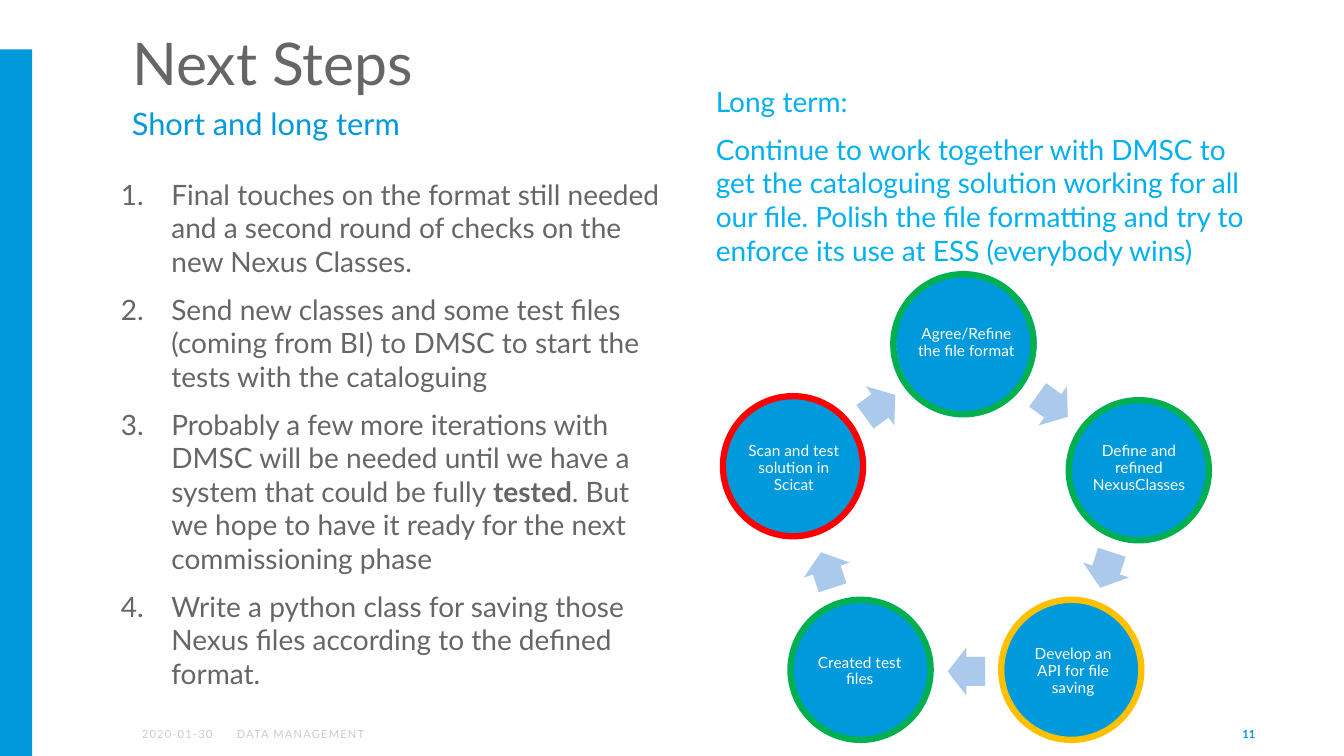
import math

import pptx
import pptx.util
from pptx.dml.color import RGBColor
from pptx.enum.shapes import MSO_SHAPE
from pptx.enum.text import MSO_ANCHOR, MSO_AUTO_SIZE, PP_ALIGN
from lxml import etree

PX = 9144  # 100 px to the inch
FONT = "Lato"
BLUE = RGBColor(0x00, 0x99, 0xDC)
SKY = RGBColor(0x00, 0xB0, 0xF0)
PALE_BLUE = RGBColor(0xAB, 0xCA, 0xEB)
GRAY = RGBColor(0x66, 0x66, 0x66)
LIGHT_GRAY = RGBColor(0xCC, 0xCC, 0xCC)
WHITE = RGBColor(0xFF, 0xFF, 0xFF)
GREEN = RGBColor(0x00, 0xB0, 0x50)
AMBER = RGBColor(0xFF, 0xC0, 0x00)
RED = RGBColor(0xFF, 0x00, 0x00)

presentation = pptx.Presentation()
presentation.slide_width = 1333 * PX
presentation.slide_height = 750 * PX
slide = presentation.slides.add_slide(presentation.slide_layouts[5])


def add_shape(kind, left, top, width, height, fill=None, line=None, line_width=1):
    shape = slide.shapes.add_shape(
        kind, round(left * PX), round(top * PX), round(width * PX), round(height * PX))
    shape.shadow.inherit = False
    if fill is None:
        shape.fill.background()
    else:
        shape.fill.solid()
        shape.fill.fore_color.rgb = fill
    if line is None:
        shape.line.fill.background()
    else:
        shape.line.color.rgb = line
        shape.line.width = pptx.util.Pt(line_width)
    return shape


def write(shape, paragraphs, size, color, insets=(10, 5, 10, 5), anchor=MSO_ANCHOR.TOP,
          align=PP_ALIGN.LEFT, spacing=None):
    """Fill a shape with paragraphs, each a list of run texts, and format them alike."""
    frame = shape.text_frame
    frame.word_wrap = True
    frame.auto_size = MSO_AUTO_SIZE.NONE
    frame.vertical_anchor = anchor
    (frame.margin_left, frame.margin_top,
     frame.margin_right, frame.margin_bottom) = [inset * PX for inset in insets]
    for index, texts in enumerate(paragraphs):
        paragraph = frame.paragraphs[0] if index == 0 else frame.add_paragraph()
        paragraph.alignment = align
        paragraph.space_before = pptx.util.Pt(10 if index else 0)
        if spacing:
            paragraph.line_spacing = spacing
        for text in texts:
            run = paragraph.add_run()
            run.text = text
            run.font.name = FONT
            run.font.size = pptx.util.Pt(size)
            run.font.color.rgb = color


# Side bar, title and subtitle
add_shape(MSO_SHAPE.RECTANGLE, 0, 49, 32, 701, BLUE)

title = slide.shapes.title
title.left, title.top, title.width, title.height = 121 * PX, 29 * PX, 1024 * PX, 72 * PX
write(title, [["Next Steps"]], 42, GRAY, (10, 5, 10, 2), spacing=0.9)

subtitle = slide.shapes.add_textbox(121 * PX, 102 * PX, 1024 * PX, 55 * PX)
write(subtitle, [["Short and long term"]], 22, BLUE, (10, 2, 10, 5))

# Short-term steps
steps = slide.shapes.add_textbox(120 * PX, 171 * PX, 546 * PX, 521 * PX)
write(steps, [
    ["Final touches on the format still needed and a second round of checks on the "
     "new Nexus Classes."],
    ["Send new classes and some test files (coming from BI) to DMSC to start the tests "
     "with the cataloguing"],
    ["Probably a few more iterations with DMSC will be needed until we have a system "
     "that could be fully ", "tested",
     ". But we hope to have it ready for the next commissioning phase"],
    ["Write a python class for saving those Nexus files according to the defined format."],
], 20, GRAY, (0, 5, 2, 5))
steps.text_frame.paragraphs[2].runs[1].font.bold = True
for paragraph in steps.text_frame.paragraphs:
    properties = paragraph._p.get_or_add_pPr()
    properties.set("marL", str(50 * PX))
    properties.set("indent", str(-50 * PX))
    number = etree.SubElement(properties, pptx.oxml.ns.qn("a:buAutoNum"))
    number.set("type", "arabicPeriod")

# Long-term goal
goal = slide.shapes.add_textbox(699 * PX, 79 * PX, 546 * PX, 200 * PX)
write(goal, [
    ["Long term:"],
    ["Continue to work together with DMSC to get the cataloguing solution working for all "
     "our file. Polish the file formatting and try to enforce its use at ESS "
     "(everybody wins)"],
], 20, SKY, (11, 5, 2, 5))

# Cycle: five discs, with an arrow halfway between neighbours
CENTER_X, CENTER_Y, RADIUS = 958.5, 520.5, 180
DISC, RING = 141, 139
ARROW_WIDTH, ARROW_HEIGHT = 37, 48
stages = [  # text, ring colour, ring left and top
    ("Agree/Refine the file format", GREEN, 886, 272),
    ("Define and refined NexusClasses", GREEN, 1060, 397),
    ("Develop an API for file saving", AMBER, 993, 595),
    ("Created test files", GREEN, 784, 595),
    ("Scan and test solution in Scicat", RED, 717, 393),
]
step_angle = 360 / len(stages)
arrow_radius = RADIUS * math.cos(math.radians(step_angle / 2))
for index, (text, ring_color, ring_left, ring_top) in enumerate(stages):
    angle = math.radians(index * step_angle)
    disc = add_shape(MSO_SHAPE.OVAL,
                     CENTER_X + RADIUS * math.sin(angle) - DISC / 2,
                     CENTER_Y - RADIUS * math.cos(angle) - DISC / 2,
                     DISC, DISC, BLUE, WHITE)
    write(disc, [[text]], 11, WHITE, (2, 2, 2, 2), MSO_ANCHOR.MIDDLE, PP_ALIGN.CENTER, 0.9)

    turn = (index + 0.5) * step_angle
    arrow = add_shape(MSO_SHAPE.RIGHT_ARROW,
                      CENTER_X + arrow_radius * math.sin(math.radians(turn)) - ARROW_WIDTH / 2,
                      CENTER_Y - arrow_radius * math.cos(math.radians(turn)) - ARROW_HEIGHT / 2,
                      ARROW_WIDTH, ARROW_HEIGHT, PALE_BLUE)
    arrow.adjustments[0] = 0.6
    arrow.adjustments[1] = 0.5
    arrow.rotation = turn

    add_shape(MSO_SHAPE.OVAL, ring_left, ring_top, RING, RING, line=ring_color, line_width=4.5)

# Footer
for text, left, width, color, align in [
    ("2020-01-30", 131, 91, LIGHT_GRAY, PP_ALIGN.LEFT),
    ("DATA MANAGEMENT", 225, 472, LIGHT_GRAY, PP_ALIGN.LEFT),
    ("11", 955, 300, BLUE, PP_ALIGN.RIGHT),
]:
    footer = slide.shapes.add_textbox(left * PX, 708 * PX, width * PX, 40 * PX)
    write(footer, [[text]], 8, color, anchor=MSO_ANCHOR.MIDDLE, align=align)
    run = footer.text_frame.paragraphs[0].runs[0]
    if color == BLUE:
        run.font.bold = True
    else:
        run.font._element.set("spc", "80") if hasattr(run.font, "_element") else run._r.get_or_add_rPr().set("spc", "80")

presentation.save("out.pptx")
